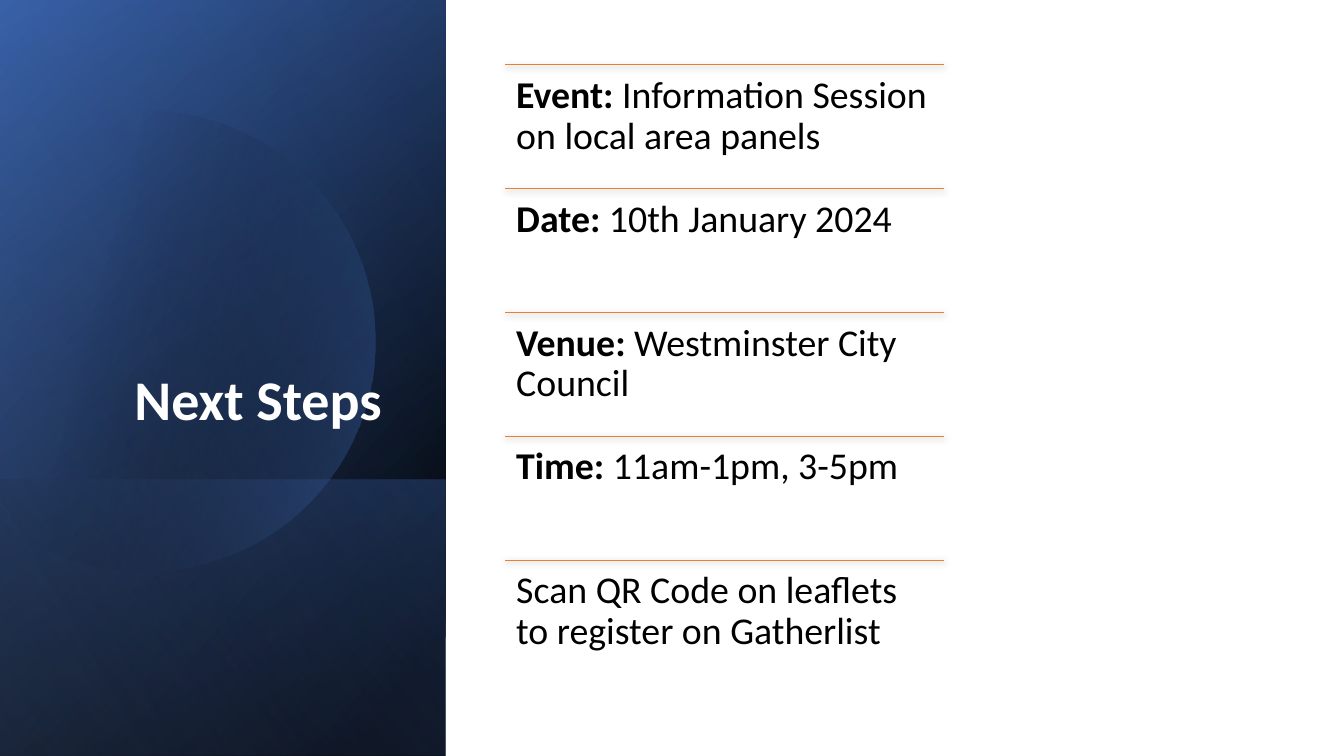
"""Build the Next Steps slide: a dark gradient panel beside a ruled list of event details."""
from lxml.etree import SubElement
from pptx import Presentation
from pptx.dml.color import RGBColor as RGB
from pptx.enum.shapes import MSO_CONNECTOR as LINK, MSO_SHAPE as SHAPE
from pptx.enum.text import MSO_ANCHOR as ANCHOR, MSO_AUTO_SIZE as FIT, PP_ALIGN as ALIGN
from pptx.oxml import parse_xml
from pptx.oxml.ns import nsdecls, qn
from pptx.util import Cm, Pt

HUES = {"black": "000000", "white": "FFFFFF", "navy": "2F5597",
        "blue": "4472C4", "pale": "8FAADC", "rule": "ED7D31"}
FONT = "Calibri"


def shade(shape, angle, stops):
    """Fill a shape with a linear gradient of (place, hue, opacity) stops."""
    shape.shadow.inherit = False
    shape.line.fill.background()
    shape.fill.gradient()
    grad = shape.fill._xPr.find(qn("a:gradFill"))
    shape.fill.gradient_angle = 360 - angle
    marks = grad.find(qn("a:gsLst"))
    for old in list(marks):
        marks.remove(old)
    for place, hue, alpha in stops:
        stop = SubElement(marks, qn("a:gs"), pos=str(place * 1000))
        tint = SubElement(stop, qn("a:srgbClr"), val=HUES[hue])
        SubElement(tint, qn("a:alpha"), val=str(alpha * 1000))


def style(par, size, hue):
    """Set the font and line spacing of a paragraph."""
    par.line_spacing = 0.9
    par.font.name = FONT
    par.font.size = Pt(size)
    par.font.color.rgb = RGB.from_string(HUES[hue])


deck = Presentation()
deck.slide_width, deck.slide_height = Cm(33.87), Cm(19.05)
slide = deck.slides.add_slide(deck.slide_layouts[5])
shapes = slide.shapes

WIDE, TALL = 11.23, 19.05
PANELS = [
    (0, 220, [(8, "black", 100), (100, "navy", 100)]),
    (0, 240, [(0, "black", 0), (99, "blue", 46)]),
    (12.09, 140, [(2, "blue", 29), (100, "black", 30)]),
    (0, 150, [(0, "black", 0), (99, "pale", 11)]),
]
DISC = [
    [(3.78, 2.79), (6.25, 2.84), (8.51, 4.5), (9.22, 6.99)],
    [(9.22, 6.99), (10.11, 10.08), (8.33, 13.28), (5.26, 14.17)],
    [(5.26, 14.17), (3.33, 14.73), (1.35, 14.25), (0, 13.06)],
    [(0, 4.09), (0.58, 3.61), (1.27, 3.23), (2.03, 3.02)],
    [(2.03, 3.02), (2.62, 2.87), (3.2, 2.79), (3.78, 2.79)],
]
STEPS = 24

for top, angle, stops in PANELS[:3]:
    panel = shapes.add_shape(SHAPE.RECTANGLE, 0, Cm(top), Cm(WIDE), Cm(TALL - top))
    shade(panel, angle, stops)

dots = []
for curve in DISC:
    for step in range(STEPS + 1):
        t = step / STEPS
        parts = ((1 - t) ** 3, 3 * t * (1 - t) ** 2, 3 * t * t * (1 - t), t ** 3)
        dots.append(tuple(Cm(sum(w * dot[axis] for w, dot in zip(parts, curve)))
                          for axis in (0, 1)))
pen = shapes.build_freeform(*dots[0])
pen.add_line_segments(dots[1:], close=True)
shade(pen.convert_to_shape(), 14, [(29, "black", 0), (100, "blue", 43)])

top, angle, stops = PANELS[3]
glow = shapes.add_shape(SHAPE.RECTANGLE, 0, Cm(top), Cm(WIDE), Cm(TALL))
shade(glow, angle, stops)

title = shapes.title
shapes.element.append(title.element)
title.left, title.top, title.width, title.height = Cm(1.3), Cm(1.63), Cm(8.89), Cm(9.4)
frame = title.text_frame
frame.text = "Next Steps"
frame.auto_size = FIT.NONE
frame.vertical_anchor = ANCHOR.BOTTOM
frame.margin_right = Cm(0.57)
par = frame.paragraphs[0]
par.alignment = ALIGN.RIGHT
par.space_after = Pt(6)
par.font.bold = True
style(par, 40, "white")

ITEMS = [
    ("Event: ", "Information Session on local area panels"),
    ("Date: ", "10th January 2024"),
    ("Venue: ", "Westminster City Council"),
    ("Time: ", "11am-1pm, 3-5pm"),
    ("", "Scan QR Code on leaflets to register on Gatherlist"),
]
LEFT, TOP, SPAN, PITCH = 12.73, 1.63, 11.07, 3.12
SHADOW = (f'<a:effectLst {nsdecls("a")}><a:outerShdw blurRad="57150" dist="19050" '
          f'dir="5400000" algn="ctr" rotWithShape="0"><a:srgbClr val="{HUES["black"]}">'
          '<a:alpha val="63000"/></a:srgbClr></a:outerShdw></a:effectLst>')

for row, (label, text) in enumerate(ITEMS):
    top = TOP + row * PITCH
    rule = shapes.add_connector(LINK.STRAIGHT, Cm(LEFT), Cm(top), Cm(LEFT + SPAN), Cm(top))
    rule.line.color.rgb = RGB.from_string(HUES["rule"])
    rule.line.width = Pt(0.5)
    rule.element.spPr.append(parse_xml(SHADOW))

    box = shapes.add_textbox(Cm(LEFT), Cm(top), Cm(SPAN), Cm(PITCH))
    frame = box.text_frame
    frame.word_wrap = True
    frame.margin_left = frame.margin_right = Cm(0.28)
    frame.margin_top = frame.margin_bottom = Cm(0.28)
    par = frame.paragraphs[0]
    style(par, 27, "black")
    if label:
        head = par.add_run()
        head.text = label
        head.font.bold = True
    par.add_run().text = text

deck.save("out.pptx")
